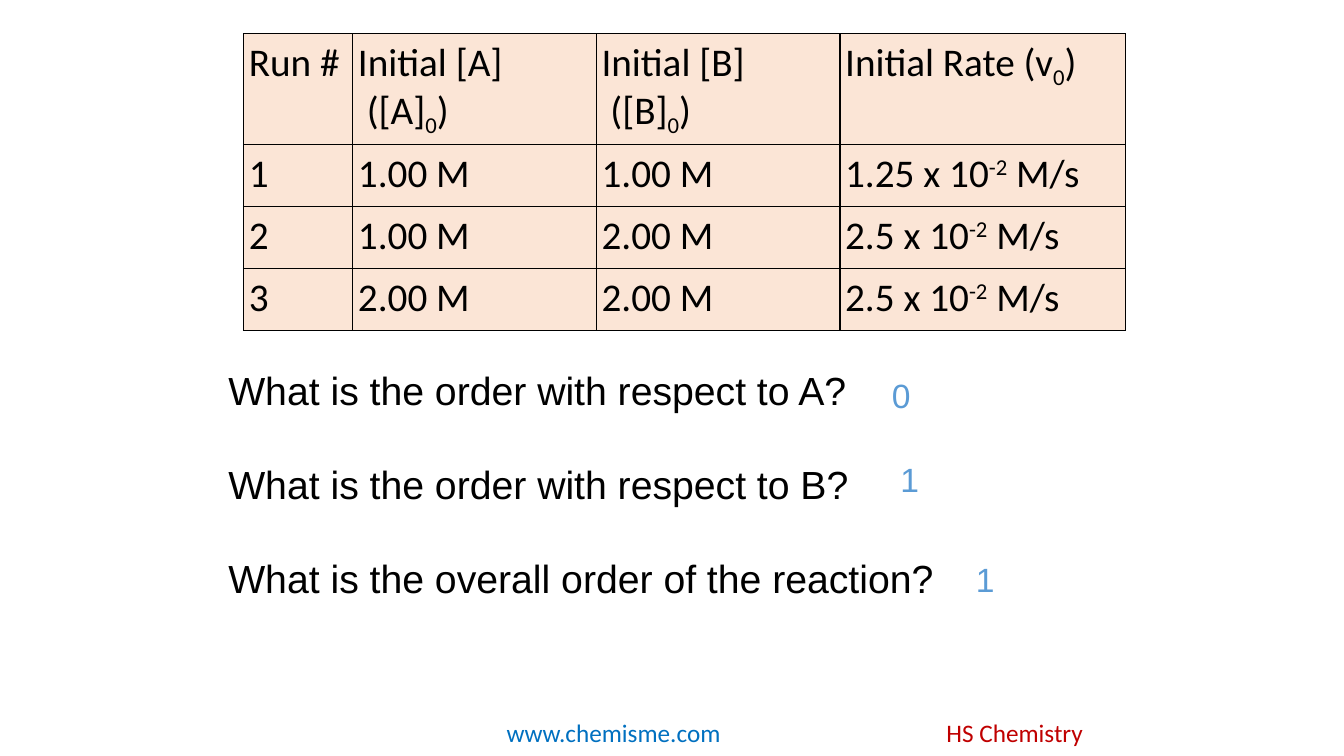
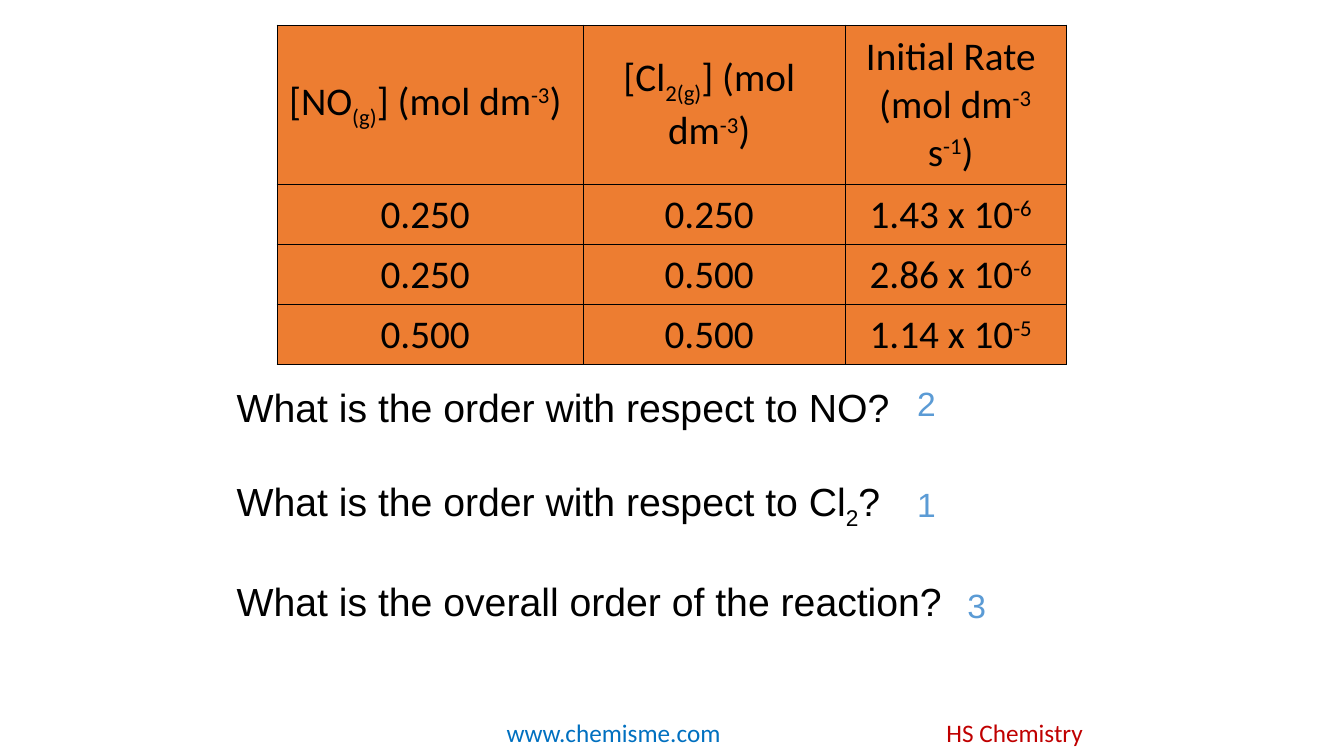
from lxml.etree import SubElement
from pptx import Presentation
from pptx.dml.color import RGBColor
from pptx.enum.text import MSO_ANCHOR, PP_ALIGN
from pptx.oxml.ns import qn
from pptx.util import Emu, Pt

PX = 9525
COLORS = {
    "text": "000000",
    "answer": "5B9BD5",
    "site": "0070C0",
    "course": "C00000",
    "peach": "FBE5D6",
    "orange": "ED7D31",
}
TABLE_FONT = {"name": "Calibri", "size": Pt(28)}
FOOTER_FONT = {"name": "Calibri", "size": Pt(18)}
QUESTION_FONT = {"name": "Arial", "size": Pt(28)}
ANSWER_FONT = {"name": "Arial", "size": Pt(24)}
BASELINES = {"~": "-25000", "^": "30000"}


def px(n):
    return Emu(n * PX)


def rgb(name):
    return RGBColor.from_string(COLORS[name])


def add_run(p, text, font, color, baseline):
    r = p.add_run()
    r.text = text
    for attr, value in font.items():
        setattr(r.font, attr, value)
    r.font.color.rgb = rgb(color)
    if baseline:
        r._r.get_or_add_rPr().set("baseline", baseline)


def write(p, text, font, color="text"):
    """Fill a paragraph; ~x~ is subscript, ^x^ is superscript, newline is a line break."""
    part, mark = "", None
    for ch in text + "\n":
        if ch not in "~^\n":
            part += ch
            continue
        if part:
            add_run(p, part, font, color, BASELINES.get(mark))
        part = ""
        if ch == "\n":
            mark = None
            p.add_line_break()
        else:
            mark = None if mark else ch
    p._p.remove(p._p[-1])  # break left by the closing newline


def add_text(s, box, lines, font, color="text", gap=0):
    tf = s.shapes.add_textbox(*map(px, box)).text_frame
    tf.word_wrap = True
    for i, line in enumerate(lines):
        p = tf.paragraphs[0] if i == 0 else tf.add_paragraph()
        if i:
            p.space_before = Pt(gap)
        write(p, line, font, color)


def set_borders(cell):
    tcPr = cell._tc.get_or_add_tcPr()
    for i, side in enumerate(("lnL", "lnR", "lnT", "lnB")):
        ln = SubElement(tcPr, qn("a:" + side), w=str(Pt(1)))
        fill = SubElement(ln, qn("a:solidFill"))
        SubElement(fill, qn("a:srgbClr"), val=COLORS["text"])
        tcPr.insert(i, ln)


def add_rate_table(s, left, top, widths, heights, rows, fill, cell_format, align):
    box = (left, top, sum(widths), sum(heights))
    table = s.shapes.add_table(len(rows), len(widths), *map(px, box)).table
    table.first_row = table.horz_banding = False
    for column, width in zip(table.columns, widths):
        column.width = px(width)
    for row, height, texts in zip(table.rows, heights, rows):
        row.height = px(height)
        for cell, text in zip(row.cells, texts):
            for attr, value in cell_format.items():
                setattr(cell, attr, value)
            cell.fill.solid()
            cell.fill.fore_color.rgb = rgb(fill)
            set_borders(cell)
            p = cell.text_frame.paragraphs[0]
            p.alignment = align
            write(p, text, TABLE_FONT)


def cell_format(anchor, inset, right):
    sides = {f"margin_{side}": px(inset) for side in ("left", "top", "bottom")}
    return {"vertical_anchor": anchor, "margin_right": px(right), **sides}


def add_questions(s, box, questions, answers):
    add_text(s, box, questions, QUESTION_FONT, gap=33.6)
    for left, top, answer in answers:
        add_text(s, (left, top, 96, 48), [answer], ANSWER_FONT, "answer")


def new_slide(prs):
    s = prs.slides.add_slide(prs.slide_layouts[6])
    for left, text, color in ((473, "www.chemisme.com", "site"), (892, "HS Chemistry", "course")):
        add_text(s, (left, 678, 231, 38), [text], FOOTER_FONT, color)
    return s


def add_ab_slide(prs):
    s = new_slide(prs)
    rows = [
        ("Run #", "Initial [A]\n ([A]~0~)", "Initial [B]\n ([B]~0~)", "Initial Rate (v~0~)"),
        ("1", "1.00 M", "1.00 M", "1.25 x 10^-2^ M/s"),
        ("2", "1.00 M", "2.00 M", "2.5 x 10^-2^ M/s"),
        ("3", "2.00 M", "2.00 M", "2.5 x 10^-2^ M/s"),
    ]
    add_rate_table(s, 232, 32, (104, 232, 232, 272), (106, 59, 59, 59), rows, "peach",
                   cell_format(MSO_ANCHOR.TOP, 5, 5), PP_ALIGN.LEFT)
    questions = [
        "What is the order with respect to A?",
        "What is the order with respect to B?",
        "What is the overall order of the reaction?",
    ]
    add_questions(s, (208, 344, 792, 236), questions,
                  [(840, 352, "0"), (848, 432, "1"), (920, 528, "1")])


def add_no_cl2_slide(prs):
    s = new_slide(prs)
    rows = [
        ("[NO~(g)~] (mol dm^-3^)", "[Cl~2(g)~] (mol dm^-3^)", "Initial Rate\n (mol dm^-3^ s^-1^)"),
        ("0.250", "0.250", "1.43 x 10^-6^"),
        ("0.250", "0.500", "2.86 x 10^-6^"),
        ("0.500", "0.500", "1.14 x 10^-5^"),
    ]
    add_rate_table(s, 264, 24, (292, 249, 211), (152, 57, 57, 57), rows, "orange",
                   cell_format(MSO_ANCHOR.MIDDLE, 6, 16), PP_ALIGN.CENTER)
    questions = [
        "What is the order with respect to NO?",
        "What is the order with respect to Cl~2~?",
        "What is the overall order of the reaction?",
    ]
    add_questions(s, (216, 360, 760, 236), questions,
                  [(864, 360, "2"), (864, 456, "1"), (912, 552, "3")])


def main():
    prs = Presentation()
    prs.slide_width, prs.slide_height = px(1280), px(720)
    add_ab_slide(prs)
    add_no_cl2_slide(prs)
    prs.save("out.pptx")


if __name__ == "__main__":
    main()
